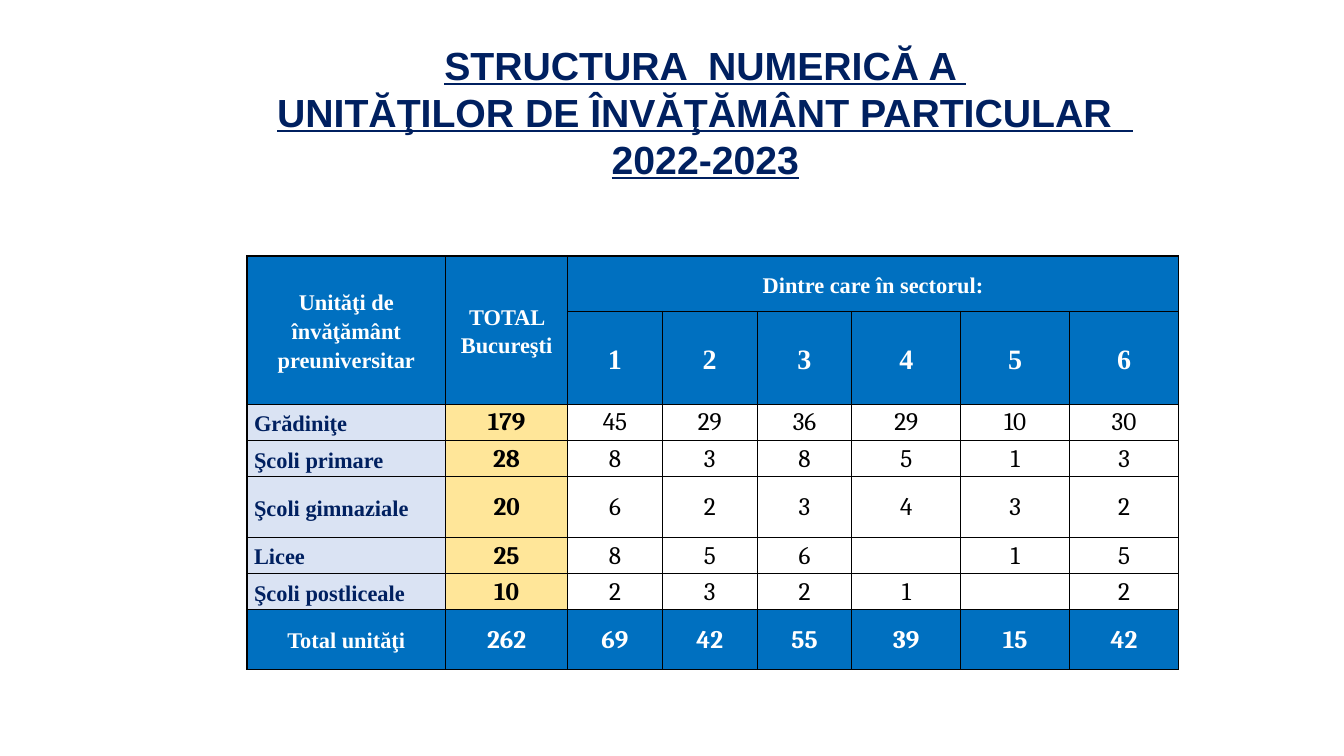
from lxml import etree
from pptx import Presentation
from pptx import util as u
from pptx.dml.color import RGBColor
from pptx.enum import text
from pptx.oxml import ns

NAVY = RGBColor(0x00, 0x20, 0x60)
BLUE = RGBColor(0x00, 0x70, 0xC0)
PALE_BLUE = RGBColor(0xDA, 0xE3, 0xF3)
SAND = RGBColor(0xFF, 0xE6, 0x99)
WHITE = RGBColor(0xFF, 0xFF, 0xFF)
BLACK = RGBColor(0x00, 0x00, 0x00)

CENTER, LEFT = text.PP_ALIGN.CENTER, text.PP_ALIGN.LEFT
LABEL_FONT = {"name": "Times New Roman", "size": u.Pt(16), "bold": True}
SECTOR_FONT = {**LABEL_FONT, "size": u.Pt(20)}
TOTAL_FONT = {"name": "Cambria", "size": u.Pt(18), "bold": True}
COUNT_FONT = {**TOTAL_FONT, "bold": False}
TITLE_FONT = {"name": "Arial", "size": u.Pt(28), "bold": True, "underline": True}
LABEL_CELL = {"margin_left": u.Inches(0.07), "margin_right": u.Inches(0.07),
              "margin_top": 0, "margin_bottom": 0}
NUMBER_CELL = {"margin_left": u.Inches(0.01), "margin_right": u.Inches(0.01),
               "margin_top": u.Inches(0.01), "margin_bottom": 0}

TITLE_LINES = ["STRUCTURA  NUMERICĂ A ",
               "UNITĂŢILOR DE ÎNVĂŢĂMÂNT PARTICULAR  ",
               "2022-2023"]
COLUMN_WIDTHS = [1.97, 1.21] + [0.94] * 3 + [1.08] * 3
ROW_HEIGHTS = [0.55, 0.92, 0.36, 0.36, 0.6, 0.36, 0.36, 0.59]
UNITS = [
    ("Grădiniţe", 179, 45, 29, 36, 29, 10, 30),
    ("Şcoli primare", 28, 8, 3, 8, 5, 1, 3),
    ("Şcoli gimnaziale", 20, 6, 2, 3, 4, 3, 2),
    ("Licee", 25, 8, 5, 6, "", 1, 5),
    ("Şcoli postliceale", 10, 2, 3, 2, 1, "", 2),
]
TOTALS = ("Total unităţi", 262, 69, 42, 55, 39, 15, 42)


def apply(target, values):
    for name, value in values.items():
        setattr(target, name, value)


def write(paragraph, words, font, color, align=CENTER, spacing=None):
    apply(paragraph, {"alignment": align, "line_spacing": spacing})
    if words == "":
        return None
    run = paragraph.add_run()
    run.text = str(words)
    apply(run.font, font)
    run.font.color.rgb = color
    return run


def add_outline(properties, tag, width, color):
    line = etree.SubElement(properties, ns.qn(tag), w=str(width))
    fill = etree.SubElement(line, ns.qn("a:solidFill"))
    etree.SubElement(fill, ns.qn("a:srgbClr"), val=str(color))
    return line


def add_title(slide):
    title = slide.shapes.title
    apply(title, {"left": u.Inches(1.84), "top": u.Inches(0.35),
                  "width": u.Inches(10.31), "height": u.Inches(1.51)})
    frame = title.text_frame
    apply(frame, {"word_wrap": True, "auto_size": text.MSO_AUTO_SIZE.NONE,
                  "vertical_anchor": text.MSO_ANCHOR.MIDDLE})
    for index, words in enumerate(TITLE_LINES):
        paragraph = frame.add_paragraph() if index else frame.paragraphs[0]
        run = write(paragraph, words, TITLE_FONT, NAVY, spacing=u.Pt(33.6))
        properties = run.font._element
        properties.insert(0, add_outline(properties, "a:ln", u.Pt(0.75), BLUE))


def style_cell(cell, fill, margins):
    properties = cell._tc.get_or_add_tcPr()
    for side in ("a:lnL", "a:lnR", "a:lnT", "a:lnB"):
        add_outline(properties, side, u.Pt(1), BLACK)
    cell.fill.solid()
    cell.fill.fore_color.rgb = fill
    apply(cell, {"vertical_anchor": text.MSO_ANCHOR.MIDDLE, **margins})


def fill_cell(cell, words, font, color, fill, align=CENTER):
    is_label = font["name"] == LABEL_FONT["name"]
    style_cell(cell, fill, LABEL_CELL if is_label else NUMBER_CELL)
    write(cell.text_frame.paragraphs[0], words, font, color, align,
          1.15 if is_label else None)


def add_header(table):
    for column in range(len(COLUMN_WIDTHS)):
        heading = {0: "Unităţi de învăţământ preuniversitar",
                   1: "TOTAL Bucureşti",
                   2: "Dintre care în sectorul:"}.get(column, "")
        sector = column - 1 if column > 1 else ""
        fill_cell(table.cell(0, column), heading, LABEL_FONT, WHITE, BLUE)
        fill_cell(table.cell(1, column), sector, SECTOR_FONT, WHITE, BLUE)
    for column in (0, 1):
        table.cell(0, column).merge(table.cell(1, column))
    table.cell(0, 2).merge(table.cell(0, 7))


def add_unit_row(table, row, unit):
    label, total, *counts = unit
    fill_cell(table.cell(row, 0), label, LABEL_FONT, NAVY, PALE_BLUE, LEFT)
    fill_cell(table.cell(row, 1), total, TOTAL_FONT, BLACK, SAND)
    for column, count in enumerate(counts, 2):
        fill_cell(table.cell(row, column), count, COUNT_FONT, BLACK, WHITE)


def add_units_table(slide):
    table = slide.shapes.add_table(
        len(ROW_HEIGHTS), len(COLUMN_WIDTHS), u.Inches(2.45), u.Inches(2.54),
        u.Inches(sum(COLUMN_WIDTHS)), u.Inches(sum(ROW_HEIGHTS))).table
    apply(table, {"first_row": False, "horz_banding": False})
    for column, width in zip(table.columns, COLUMN_WIDTHS):
        column.width = u.Inches(width)
    for row, height in zip(table.rows, ROW_HEIGHTS):
        row.height = u.Inches(height)
    add_header(table)
    for row, unit in enumerate(UNITS, 2):
        add_unit_row(table, row, unit)
    for column, words in enumerate(TOTALS):
        font = TOTAL_FONT if column else LABEL_FONT
        fill_cell(table.cell(7, column), words, font, WHITE, BLUE)


def main():
    deck = Presentation()
    apply(deck, {"slide_width": u.Inches(13.33), "slide_height": u.Inches(7.5)})
    slide = deck.slides.add_slide(deck.slide_layouts[5])
    add_title(slide)
    add_units_table(slide)
    deck.save("out.pptx")


if __name__ == "__main__":
    main()
